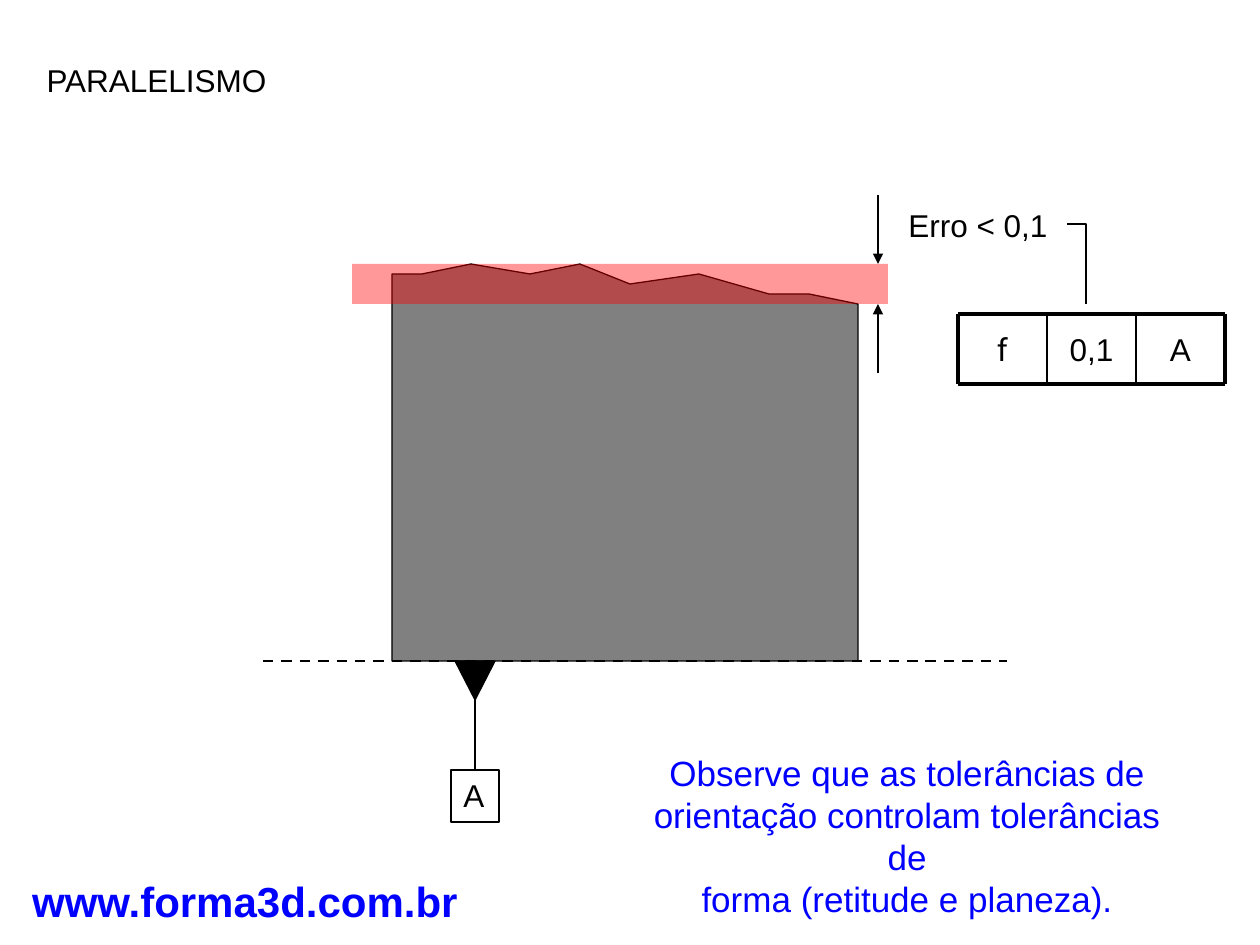
from dataclasses import dataclass

import pptx
import pptx.dml.color
import pptx.enum.dml
import pptx.enum.shapes
import pptx.enum.text
import pptx.oxml.ns
import pptx.util
from lxml import etree

SCALE = 914400 / 126  # EMU in one px
KIND = pptx.enum.shapes.MSO_SHAPE
ALIGN = pptx.enum.text.PP_ALIGN
ANCHOR = pptx.enum.text.MSO_ANCHOR


@dataclass(frozen=True)
class Theme:
    black: str = "000000"
    white: str = "FFFFFF"
    gray: str = "808080"
    red: str = "FF0000"
    blue: str = "0000FF"
    font: str = "Arial"
    symbol: str = "Roboto"
    label: int = 18
    note: int = 20
    site: int = 24
    thin: float = 0.75
    inner: float = 1
    mid: float = 1.5
    thick: float = 2.25


def emu(px):
    return pptx.util.Emu(round(px * SCALE))


def rgb(color):
    return pptx.dml.color.RGBColor.from_string(color)


def child(parent, tag, **attrs):
    return etree.SubElement(parent, pptx.oxml.ns.qn(tag), attrs)


class Sketch:
    def __init__(self, slide, theme):
        self.slide = slide
        self.shapes = slide.shapes
        self.theme = theme

    def label(self, shape, text, size=None, color=None, font=None, bold=False,
              align=ALIGN.LEFT, anchor=ANCHOR.TOP, wrap=False):
        frame = shape.text_frame
        frame.auto_size = pptx.enum.text.MSO_AUTO_SIZE.NONE
        frame.word_wrap = wrap
        frame.vertical_anchor = anchor
        frame.text = text
        for para in frame.paragraphs:
            para.alignment = align
            for run in para.runs:
                run.font.name = font or self.theme.font
                run.font.size = pptx.util.Pt(size or self.theme.label)
                run.font.bold = bold
                run.font.color.rgb = rgb(color or self.theme.black)
        return shape

    def title(self, text, *box):
        shape = self.shapes.title
        shape.left, shape.top, shape.width, shape.height = map(emu, box)
        self.label(shape, text)

    def text(self, text, *box, **style):
        return self.label(self.shapes.add_textbox(*map(emu, box)), text, **style)

    def paint(self, shape, fill, line):
        shape.shadow.inherit = False
        if fill:
            shape.fill.solid()
            shape.fill.fore_color.rgb = rgb(fill)
        else:
            shape.fill.background()
        if line:
            shape.line.color.rgb = rgb(self.theme.black)
            shape.line.width = pptx.util.Pt(line)
        else:
            shape.line.fill.background()
        return shape

    def shape(self, kind, *box, fill, line=None, alpha=None):
        shape = self.paint(self.shapes.add_shape(kind, *map(emu, box)), fill, line)
        if alpha:
            tint = shape._element.spPr.find(".//" + pptx.oxml.ns.qn("a:srgbClr"))
            child(tint, "a:alpha", val=str(alpha * 1000))
        return shape

    def outline(self, points, fill=None, close=True):
        first, *rest = [(emu(x), emu(y)) for x, y in points]
        pen = self.shapes.build_freeform(*first)
        pen.add_line_segments(rest, close=close)
        return self.paint(pen.convert_to_shape(), fill, self.theme.thin)

    def line(self, *ends, width, dash=False, arrow=False):
        straight = pptx.enum.shapes.MSO_CONNECTOR.STRAIGHT
        line = self.shapes.add_connector(straight, *map(emu, ends))
        line.line.color.rgb = rgb(self.theme.black)
        line.line.width = pptx.util.Pt(width)
        if dash:
            line.line.dash_style = pptx.enum.dml.MSO_LINE.DASH
        if arrow:
            stroke = line._element.spPr.find(pptx.oxml.ns.qn("a:ln"))
            child(stroke, "a:tailEnd", type="triangle")
        child(line._element.spPr, "a:effectLst")
        return line


def main():
    deck = pptx.Presentation()
    deck.slide_width, deck.slide_height = emu(1260), emu(945)
    theme = Theme()
    art = Sketch(deck.slides.add_slide(deck.slide_layouts[5]), theme)

    # Heading and site address
    art.title("PARALELISMO", 34, 55, 248, 50)
    art.text("www.forma3d.com.br", 19, 869, 452, 63, size=theme.site,
             color=theme.blue, bold=True, align=ALIGN.CENTER)

    # Part with its rough top, datum line and tolerance band
    top, low, base = 264, 304, 661
    rough = [(858, low), (809, 294), (769, 294), (699, 274), (630, 284),
             (580, top), (530, 274), (471, top), (422, 274), (392, 274)]
    art.outline([(392, base), (858, base)] + rough, fill=theme.gray)
    art.line(263, base, 1007, base, width=theme.mid, dash=True)
    art.shape(KIND.RECTANGLE, 352, top, 536, low - top, fill=theme.red, alpha=40)

    # Datum mark A
    mark = art.shape(KIND.ISOSCELES_TRIANGLE, 455, base, 40, 39,
                     fill=theme.black, line=theme.thin)
    mark.rotation = 180
    datum = art.shape(KIND.RECTANGLE, 451, 770, 48, 52,
                      fill=theme.white, line=theme.thin)
    art.label(datum, "A")
    stem = art.line(475, 700, 475, 770, width=theme.mid)
    stem.end_connect(datum, 0)

    # Error arrows on both sides of the band
    for start, end in ((195, top), (373, low)):
        art.line(878, start, 878, end, width=theme.thin, arrow=True)
    art.text("Erro < 0,1", 896, 200, 202, 50, wrap=True)

    # Tolerance frame with its leader
    left, head, cell, tall = 958, 314, 89, 70
    cells = [("f", theme.symbol), ("0,1", theme.font), ("A", theme.font)]
    right, foot = left + cell * len(cells), head + tall
    for i, (text, font) in enumerate(cells):
        box = art.shape(KIND.RECTANGLE, left + i * cell, head, cell, tall,
                        fill=theme.white)
        art.label(box, text, font=font, align=ALIGN.CENTER,
                  anchor=ANCHOR.MIDDLE, wrap=True)
    for y in (head, foot):
        art.line(left, y, right, y, width=theme.thick)
    for x in range(left, right + 1, cell):
        edge = x in (left, right)
        art.line(x, head, x, foot, width=theme.thick if edge else theme.inner)
    art.outline([(1067, 224), (1086, 224), (1086, 304)], close=False)

    # Closing remark
    note = art.text("Observe que as tolerâncias de\vorientação controlam "
                    "tolerâncias de\vforma (retitude e planeza).",
                    640, 745, 580, 138, size=theme.note, color=theme.blue,
                    align=ALIGN.CENTER, wrap=True)
    note.text_frame.margin_right = emu(58)

    deck.save("out.pptx")


if __name__ == "__main__":
    main()
